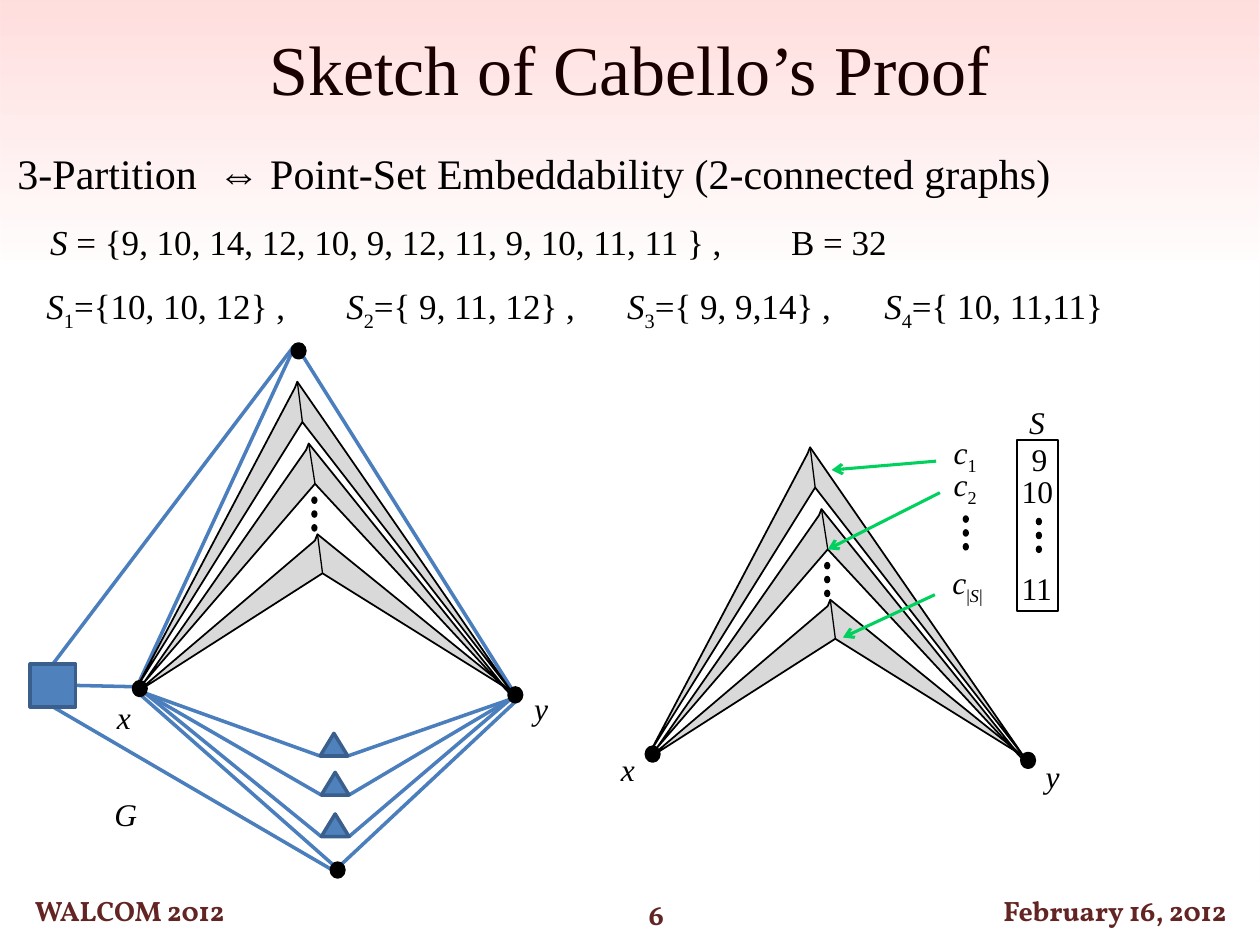
from lxml import etree
from pptx import Presentation
from pptx.dml.color import RGBColor as RGB
from pptx.enum.shapes import MSO_CONNECTOR as LINK, MSO_SHAPE as SHAPE
from pptx.enum.text import MSO_ANCHOR as ANCHOR, MSO_AUTO_SIZE as FIT, PP_ALIGN as ALIGN
from pptx.oxml import parse_xml
from pptx.oxml.ns import nsdecls, qn
from pptx.util import Inches, Pt

WIDE, HIGH = Inches(10), Inches(7.5)
COL, ROW = WIDE / 10, HIGH / 7.5
BLACK, GREY = RGB(0, 0, 0), RGB(0xD9, 0xD9, 0xD9)
BLUE, NAVY, EDGE = RGB(0x4F, 0x81, 0xBD), RGB(0x3A, 0x5F, 0x8C), RGB(0x4B, 0x7E, 0xBC)
GREEN, WINE = RGB(0, 0xD0, 0x5E), RGB(0x63, 0x25, 0x23)
SERIF = {"name": "Times New Roman", "bold": False}
FOOT = {"name": "Vollkorn", "bold": True, "size": Pt(16)}


def cell(x, y):
    """Turn grid columns and rows into slide lengths."""
    return round(x * COL), round(y * ROW)


def style(run, color, look):
    """Format one run from a dict of font values."""
    for key, value in look.items():
        setattr(run.font, key, value)
    run.font.color.rgb = color


def form(slide, kind, x, y, w, h, fill=None, line=None, width=1):
    """Add a preset shape with a plain fill and outline."""
    item = slide.shapes.add_shape(kind, *cell(x, y), *cell(w, h))
    return paint(item, fill, line, width)


def paint(item, fill, line, width):
    """Set fill, outline and shadow of a shape."""
    item.shadow.inherit = False
    if fill is None:
        item.fill.background()
    else:
        item.fill.solid()
        item.fill.fore_color.rgb = fill
    if line is None:
        item.line.fill.background()
    else:
        item.line.color.rgb = line
        item.line.width = Pt(width)
    return item


def link(slide, start, end, color, width, arrow=False):
    """Draw a straight line, with an arrowhead at its start if asked."""
    item = slide.shapes.add_connector(LINK.STRAIGHT, *cell(*start), *cell(*end))
    item.line.color.rgb = color
    item.line.width = Pt(width)
    if arrow:
        etree.SubElement(item.line._get_or_add_ln(), qn("a:headEnd"), type="arrow")
    etree.SubElement(item._element.spPr, qn("a:effectLst"))


def text(slide, x, y, w, h, runs, size=18, tabs=()):
    """Write runs marked i for italic and s for subscript, with tab stops."""
    frame = slide.shapes.add_textbox(*cell(x, y), *cell(w, h)).text_frame
    frame.word_wrap = bool(tabs)
    frame.auto_size = FIT.SHAPE_TO_FIT_TEXT
    para = frame.paragraphs[0]
    for words, marks in runs:
        run = para.add_run()
        run.text = words
        style(run, BLACK, {**SERIF, "size": Pt(size), "italic": "i" in marks})
        if "s" in marks:
            run.font._element.set("baseline", "-25000")
    if tabs:
        stops = etree.SubElement(para._p.get_or_add_pPr(), qn("a:tabLst"))
        for stop in tabs:
            etree.SubElement(stops, qn("a:tab"), pos=str(cell(stop, 0)[0]), algn="l")


def node(slide, x, y):
    """Draw a graph vertex."""
    form(slide, SHAPE.OVAL, x, y, 0.1, 0.11, BLACK, BLACK, 2)


def dots(slide, x, y):
    """Draw a vertical ellipsis."""
    for row in range(3):
        form(slide, SHAPE.OVAL, x, y + row * 0.11, 0.05, 0.06, BLACK)


def fan(slide, x, y):
    """Draw the three nested kites between vertices x and y."""
    kites = (
        ((0.04, 2.46), (1.47, 1.21), (3.0, 2.45), (1.51, 1.52)),
        ((0.04, 2.42), (1.31, 0), (3.01, 2.46), (1.35, 0.32)),
        ((0.09, 2.39), (1.4, 0.49), (3.0, 2.48), (1.45, 0.81)),
    )
    for kite in kites:
        west, peak, east, notch = [(x + a, y + b) for a, b in kite]
        nick = peak[0] - 0.02, peak[1] + 0.05
        path = slide.shapes.build_freeform(*cell(*west))
        path.add_line_segments([cell(*p) for p in (nick, peak, east, notch)], close=True)
        paint(path.convert_to_shape(), GREY, BLACK, 1)
        link(slide, peak, notch, BLACK, 0.75)
    dots(slide, x + 1.42, y + 0.91)
    node(slide, x + 0.01, y + 2.38)
    node(slide, x + 2.99, y + 2.43)


def graph(slide, x, y):
    """Draw the whole graph G."""
    west, east = (x + 0.95, y + 2.8), (x + 3.85, y + 2.85)
    edges = (
        (2.51, 4.16, 3.89, 2.87), (0.86, 2.75, 0.4, 2.74), (0.22, 2.91, 2.43, 4.2),
        (0.91, 2.81, 2.44, 4.16), (2.13, 0.05, 0.22, 2.57), (2.2, 0.12, 3.87, 2.78),
        (2.12, 0.09, 0.91, 2.7),
    )
    for a, b, c, d in edges:
        link(slide, (x + a, y + b), (x + c, y + d), EDGE, 2)
    for a, b in ((2.34, 3.12), (2.35, 3.43), (2.35, 3.76)):
        base = y + b + 0.18
        link(slide, west, (x + a, base), EDGE, 2)
        link(slide, (x + a + 0.22, base), east, EDGE, 2)
        form(slide, SHAPE.ISOSCELES_TRIANGLE, x + a, y + b, 0.22, 0.18, BLUE, NAVY, 2)
    form(slide, SHAPE.RECTANGLE, x + 0.04, y + 2.57, 0.36, 0.34, BLUE, NAVY, 2)
    fan(slide, x + 0.85, y + 0.33)
    node(slide, x + 2.43, y + 4.15)
    node(slide, x + 2.12, y + 0.03)
    for name, a, b, w in (("x", 0.63, 2.79, 0.31), ("y", 3.94, 2.72, 0.31), ("G", 0.61, 3.56, 0.38)):
        text(slide, x + a, y + b, w, 0.4, [(name, "i")])


def chain(slide, x, y):
    """Draw the kites with their labels and the column of S."""
    fan(slide, x + 0.32, y + 0.45)
    form(slide, SHAPE.RECTANGLE, x + 3.27, y + 0.39, 0.33, 1.36, None, BLACK)
    labels = (
        (0.03, 2.8, 0.31, [("x", "i")]),
        (3.4, 2.86, 0.31, [("y", "i")]),
        (2.67, 0.29, 0.41, [("c", "i"), ("1", "s")]),
        (2.67, 0.54, 0.41, [("c", "i"), ("2", "s")]),
        (2.66, 1.32, 0.47, [("c", "i"), ("|", "s"), ("S", "is"), ("|", "s")]),
        (3.27, 0.05, 0.39, [("S", "i")]),
        (3.29, 0.34, 0.33, [("9", "")]),
        (3.21, 0.6, 0.45, [("10", "")]),
        (3.21, 1.37, 0.45, [("11", "")]),
    )
    for a, b, w, runs in labels:
        text(slide, x + a, y + b, w, 0.4, runs)
    dots(slide, x + 2.84, y + 0.99)
    dots(slide, x + 3.42, y + 1.01)
    for a, b, c, d in ((1.8, 0.63, 2.63, 0.56), (1.77, 1.26, 2.66, 0.81), (1.89, 1.96, 2.62, 1.62)):
        link(slide, (x + a, y + b), (x + c, y + d), GREEN, 1.75, True)


def glow(slide, x, y, w, h):
    """Fade a red tint down from the top of the box."""
    item = form(slide, SHAPE.RECTANGLE, x, y, w, h, BLUE)
    stops = "".join(
        f'<a:gs pos="{pos}000"><a:srgbClr val="FF0000"><a:alpha val="{alpha}000"/></a:srgbClr></a:gs>'
        for pos, alpha in ((0, 0), (70, 0), (100, 13)))
    grad = parse_xml(f'<a:gradFill {nsdecls("a")} rotWithShape="1"><a:gsLst>{stops}</a:gsLst>'
                     '<a:lin ang="16200000" scaled="0"/></a:gradFill>')
    props = item._element.spPr
    props.replace(props.find(qn("a:solidFill")), grad)


def title(slide, x, y, w, h):
    """Fill the title placeholder."""
    head = slide.shapes.title
    head.left, head.top = cell(x, y)
    head.width, head.height = cell(w, h)
    head.text_frame.text = "Sketch of Cabello’s Proof"
    style(head.text_frame.paragraphs[0].runs[0], BLACK, {**SERIF, "size": Pt(40)})


def claim(slide, x, y):
    """Write the reduction and its example sets."""
    text(slide, x + 0.04, y, 9.9, 0.5,
         [("3-Partition\t⇔ Point-Set Embeddability (2-connected graphs)", "")], 24, [1.59])
    text(slide, x + 0.3, y + 0.58, 9.7, 0.44,
         [("S", "i"), (" = {9, 10, 14, 12, 10, 9, 12, 11, 9, 10, 11, 11 } ,\tB = 32", "")], 20, [5.88])
    sets = ("={10, 10, 12} ,\t", "={ 9, 11, 12} ,\t", "={ 9, 9,14} ,\t", "={ 10, 11,11}")
    runs = [run for number, items in enumerate(sets, 1)
            for run in (("S", "i"), (str(number), "s"), (items, ""))]
    text(slide, x + 0.27, y + 1.09, 9.73, 0.44, runs, 20, [2.38, 4.61, 6.65])


def footer(slide, y):
    """Write event, page and date along the bottom."""
    for words, x, drop, w in (("WALCOM 2012", 0, 0, 2.06), ("6", 4.18, 0.03, 2.06),
                              ("February 16, 2012", 7.7, 0, 2.3)):
        frame = form(slide, SHAPE.ROUNDED_RECTANGLE, x, y + drop, w, 0.35).text_frame
        frame.vertical_anchor = ANCHOR.MIDDLE
        para = frame.paragraphs[0]
        para.alignment = ALIGN.CENTER
        run = para.add_run()
        run.text = words
        style(run, WINE, FOOT)


def main():
    """Build and save the deck."""
    deck = Presentation()
    deck.slide_width, deck.slide_height = WIDE, HIGH
    slide = deck.slides.add_slide(deck.slide_layouts[5])
    glow(slide, 0, 0, 10, 7.01)
    title(slide, 0, 0.15, 10, 0.77)
    claim(slide, 0, 1.12)
    graph(slide, 0.2, 2.7)
    chain(slide, 4.8, 3.1)
    footer(slide, 7.05)
    deck.save("out.pptx")


if __name__ == "__main__":
    main()
